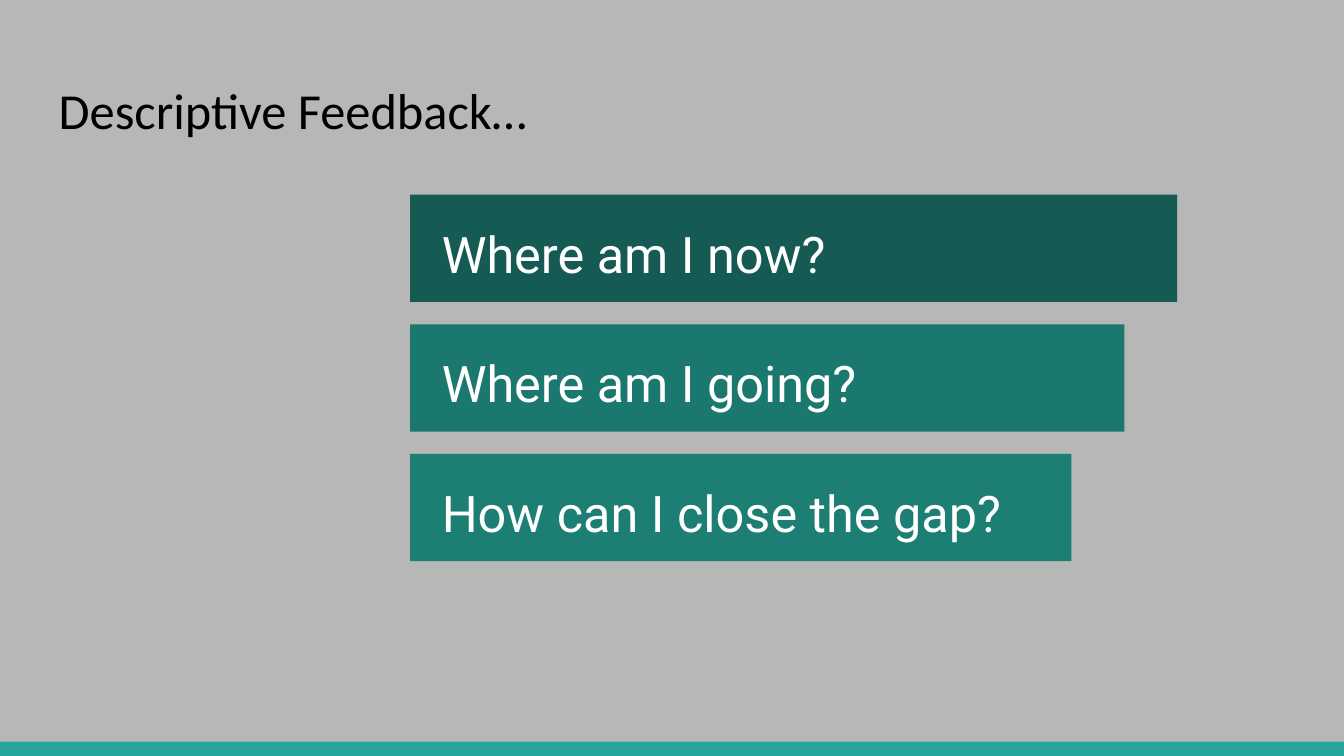
from pptx import Presentation
from pptx.dml.color import RGBColor
from pptx.enum.shapes import MSO_SHAPE as Shape
from pptx.enum.text import MSO_ANCHOR as Anchor
from pptx.util import Cm, Pt

GREY = RGBColor(0xB7, 0xB7, 0xB7)
TEAL = RGBColor(0x26, 0xA6, 0x9A)
BLACK = RGBColor(0x00, 0x00, 0x00)
WHITE = RGBColor(0xFF, 0xFF, 0xFF)
DARK_TEAL = RGBColor(0x15, 0x5B, 0x54)
MID_TEAL = RGBColor(0x1B, 0x78, 0x6E)
LIGHT_TEAL = RGBColor(0x1D, 0x7E, 0x74)

# Question, bar colour, label width and label height in cm
QUESTIONS = [
    ("Where am I now?", DARK_TEAL, 13.23, 1.6),
    ("Where am I going?", MID_TEAL, 12.14, 0.91),
    ("How can I close the gap?", LIGHT_TEAL, 12.14, 0.91),
]
BAR_LEFT, BAR_TOP, BAR_HEIGHT = 7.75, 3.68, 2.03
BAR_WIDTH, BAR_SHRINK, BAR_PITCH = 14.5, 1.0, 2.45
LABEL_LEFT = 8.1


def add_bar(shapes, left, top, width, height, color):
    bar = shapes.add_shape(Shape.RECTANGLE, Cm(left), Cm(top), Cm(width), Cm(height))
    bar.shadow.inherit = False
    bar.fill.solid()
    bar.fill.fore_color.rgb = color
    bar.line.fill.background()


def add_label(shapes, left, top, width, height, text, font, color,
              anchor=Anchor.TOP, inset=0.25, spacing=1.0):
    label = shapes.add_textbox(Cm(left), Cm(top), Cm(width), Cm(height))
    frame = label.text_frame
    frame.word_wrap = True
    frame.vertical_anchor = anchor
    frame.margin_left = frame.margin_right = Cm(0.25)
    frame.margin_top = frame.margin_bottom = Cm(inset)
    paragraph = frame.paragraphs[0]
    paragraph.line_spacing = spacing
    run = paragraph.add_run()
    run.text = text
    run.font.name = font
    run.font.size = Pt(27)
    run.font.color.rgb = color


def add_question(slide, index, text, color, label_width, label_height):
    question = slide.shapes.add_group_shape()
    top = BAR_TOP + index * BAR_PITCH
    add_bar(question.shapes, BAR_LEFT, top, BAR_WIDTH - index * BAR_SHRINK,
            BAR_HEIGHT, color)
    label_top = top + (BAR_HEIGHT - label_height) / 2
    add_label(question.shapes, LABEL_LEFT, label_top, label_width, label_height,
              text, "Roboto", WHITE, Anchor.MIDDLE, 0.13, 1.15)


def main():
    deck = Presentation()
    deck.slide_width, deck.slide_height = Cm(25.4), Cm(14.29)
    slide = deck.slides.add_slide(deck.slide_layouts[6])

    # Background and footer strip
    slide.background.fill.solid()
    slide.background.fill.fore_color.rgb = GREY
    add_bar(slide.shapes, 0, 14.02, 25.4, 0.27, TEAL)

    # Title
    add_label(slide.shapes, 0.86, 1.24, 23.67, 1.7, "Descriptive Feedback…",
              "Calibri", BLACK)

    # Stepped question bars
    for index, question in enumerate(QUESTIONS):
        add_question(slide, index, *question)

    deck.save("out.pptx")


if __name__ == "__main__":
    main()
